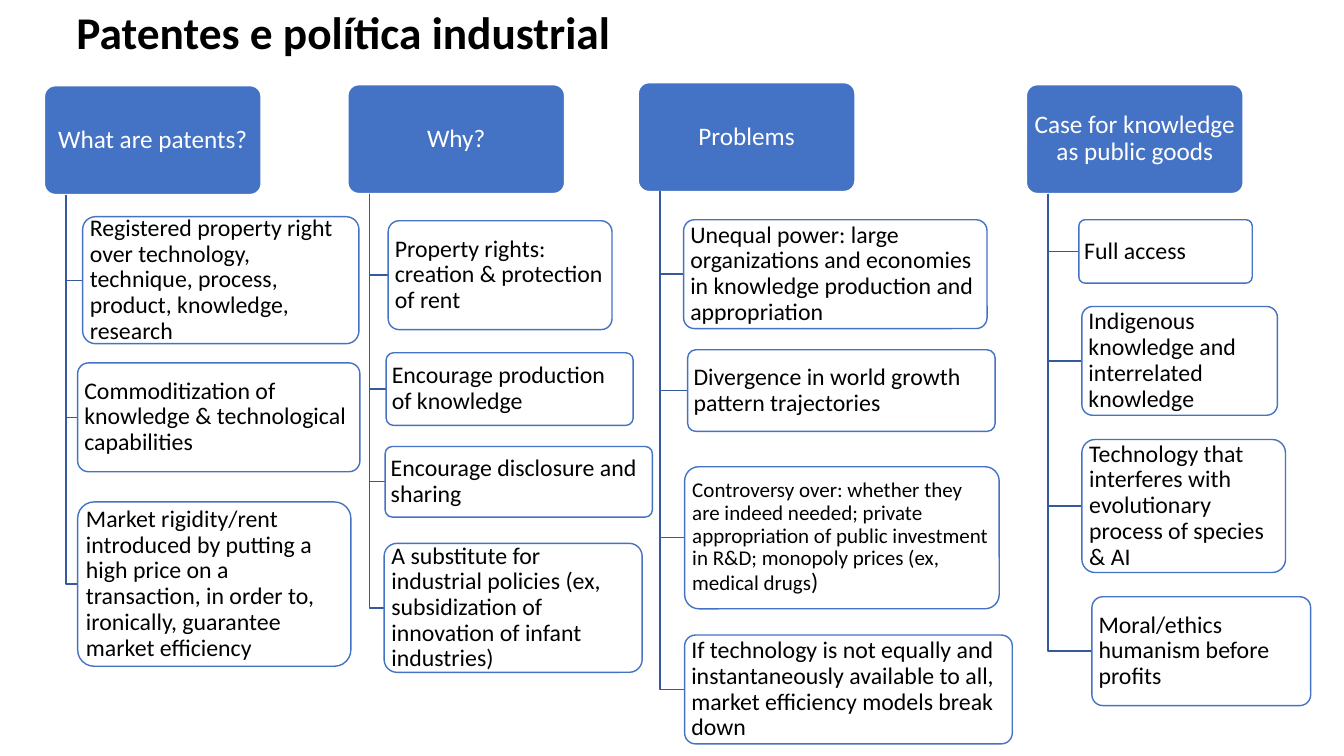
from lxml import etree
from pptx import Presentation
from pptx import util as u
from pptx.dml.color import RGBColor
from pptx.enum import shapes, text
from pptx.oxml import ns

FONT = "Calibri"
BLUE, STEM_BLUE, WHITE, BLACK = "4472C4", "34599C", "FFFFFF", "000000"
HEAD_W, HEAD_H = 2.15, 1.08
CORNER = 0.1
TITLE = "Patentes e política industrial"

# Each topic: heading, left and top of its heading, then its branches as
# (left, top, width, height) from the heading's corner, followed by text runs.
TOPICS = [
    ("What are patents?", 0.44, 0.85, [
        ((0.38, 1.3, 2.74, 1.26), [("Registered property right over technology, "
                                    "technique, process, product, knowledge, research", 17)]),
        ((0.33, 2.75, 2.8, 1.08), [("Commoditization of knowledge & technological "
                                    "capabilities", 17)]),
        ((0.33, 4.13, 2.71, 1.63), [("Market rigidity/rent introduced by putting a high "
                                     "price on a transaction, in order to, ironically, "
                                     "guarantee market efficiency", 17)]),
    ]),
    ("Why?", 3.45, 0.84, [
        ((0.4, 1.35, 2.22, 1.08), [("Property rights: creation & protection of rent", 17)]),
        ((0.38, 2.66, 2.45, 0.72), [("Encourage production of knowledge", 17)]),
        ((0.37, 3.59, 2.65, 0.7), [("Encourage disclosure and sharing", 17)]),
        ((0.36, 4.55, 2.56, 1.28), [("A substitute for industrial policies (ex, subsidization "
                                     "of innovation of infant industries)", 17)]),
    ]),
    ("Problems", 6.33, 0.82, [
        ((0.45, 1.36, 3.01, 1.08), [("Unequal power: large organizations and economies in "
                                     "knowledge production and appropriation", 17)]),
        ((0.49, 2.65, 3.05, 0.81), [("Divergence in world growth pattern trajectories", 17)]),
        ((0.46, 3.81, 3.12, 1.41), [("Controversy over: whether they are indeed needed; "
                                     "private appropriation of public investment in R&D; "
                                     "monopoly prices (ex, medical drugs", 15), (")", 17)]),
        ((0.46, 5.48, 3.25, 1.08), [("If technology is not equally and instantaneously "
                                     "available to all, market efficiency models break "
                                     "down", 17)]),
    ]),
    ("Case for knowledge as public goods", 10.18, 0.84, [
        ((0.52, 1.34, 1.72, 0.63), [("Full access", 17)]),
        ((0.55, 2.2, 1.94, 1.08), [("Indigenous knowledge and interrelated knowledge", 17)]),
        ((0.55, 3.52, 2.02, 1.32), [("Technology that interferes with evolutionary process "
                                     "of species & AI", 17)]),
        ((0.65, 5.08, 2.17, 1.08), [("Moral/ethics humanism before profits", 17)]),
    ]),
]


def color(hex_code):
    return RGBColor.from_string(hex_code)


def write(frame, runs, hex_code, align, space_after=0, bold=False):
    frame.word_wrap = True
    frame.vertical_anchor = text.MSO_ANCHOR.MIDDLE
    paragraph = frame.paragraphs[0]
    paragraph.alignment = align
    paragraph.line_spacing = 0.9
    paragraph.space_after = u.Pt(space_after)
    for words, size in runs:
        run = paragraph.add_run()
        run.text = words
        run.font.name = FONT
        run.font.size = u.Pt(size)
        run.font.bold = bold
        run.font.color.rgb = color(hex_code)


def outline(shape, hex_code):
    shape.shadow.inherit = False
    shape.line.color.rgb = color(hex_code)
    shape.line.width = u.Pt(1)


def add_card(slide, box, fill, line):
    """Rounded box with narrow text margins."""
    card = slide.shapes.add_shape(shapes.MSO_SHAPE.ROUNDED_RECTANGLE,
                                  *(u.Inches(length) for length in box))
    card.adjustments[0] = CORNER
    outline(card, line)
    card.fill.solid()
    card.fill.fore_color.rgb = color(fill)
    frame = card.text_frame
    frame.margin_left = frame.margin_right = u.Pt(2.5)
    frame.margin_top = frame.margin_bottom = u.Pt(1.7)
    return card


def add_heading(slide, box, words):
    card = add_card(slide, box, BLUE, WHITE)
    write(card.text_frame, [(words, 18)], WHITE, text.PP_ALIGN.CENTER, 8)


def add_branch(slide, box, runs):
    card = add_card(slide, box, WHITE, BLUE)
    fill = next(card.fill._xPr.iter(ns.qn("a:srgbClr")))
    etree.SubElement(fill, ns.qn("a:alpha"), val="90000")
    write(card.text_frame, runs, BLACK, text.PP_ALIGN.LEFT, 7)


def add_stem(slide, x, top, end_x, end_y):
    """Line down from a heading, then right to the branch."""
    x, top, end_x, end_y = (u.Inches(length) for length in (x, top, end_x, end_y))
    builder = slide.shapes.build_freeform(x, top)
    builder.add_line_segments([(x, end_y), (end_x, end_y)], close=False)
    stem = builder.convert_to_shape()
    stem.fill.background()
    outline(stem, STEM_BLUE)


def add_topic(slide, heading, left, top, branches):
    add_heading(slide, (left, top, HEAD_W, HEAD_H), heading)
    for (dx, dy, width, height), runs in branches:
        x, y = left + dx, top + dy
        add_stem(slide, left + HEAD_W / 10, top + HEAD_H, x, y + height / 2)
        add_branch(slide, (x, y, width, height), runs)


def add_title(slide, box):
    title = slide.shapes.add_textbox(*(u.Inches(length) for length in box))
    write(title.text_frame, [(TITLE, 32.4)], BLACK, text.PP_ALIGN.LEFT, bold=True)


def main():
    deck = Presentation()
    deck.slide_width, deck.slide_height = u.Inches(13.33), u.Inches(7.5)
    slide = deck.slides.add_slide(deck.slide_layouts[6])
    add_title(slide, (0.66, 0.06, 12.28, 0.58))
    for topic in TOPICS:
        add_topic(slide, *topic)
    deck.save("out.pptx")


if __name__ == "__main__":
    main()
